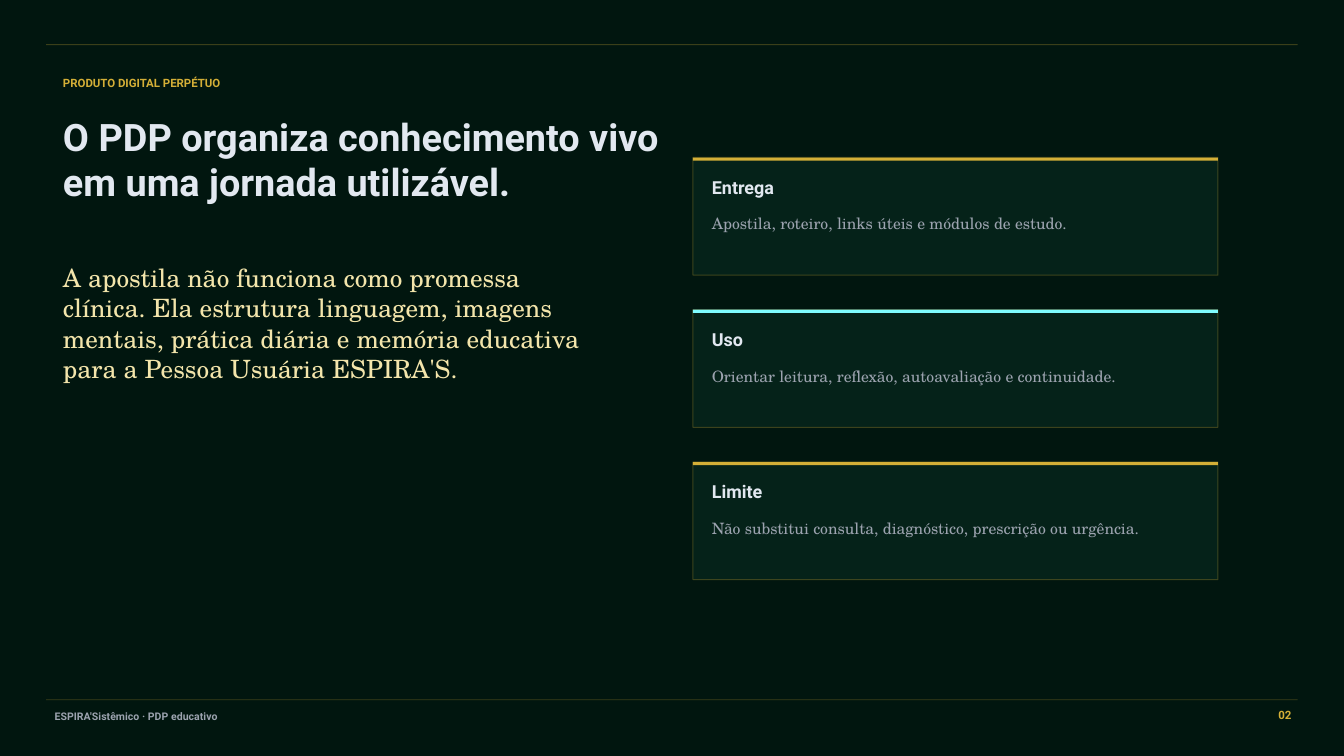
from lxml import etree
from pptx import Presentation
from pptx.dml.color import RGBColor
from pptx.enum.shapes import MSO_SHAPE
from pptx.enum.text import PP_ALIGN
from pptx.oxml.ns import qn
from pptx.util import Inches, Pt

RECTANGLE = MSO_SHAPE.RECTANGLE
LEFT, RIGHT = PP_ALIGN.LEFT, PP_ALIGN.RIGHT

WIDTH, HEIGHT = 13.33, 7.5
COLUMNS, ROWS = 64, 36
SANS, SERIF = "Roboto", "TeX Gyre Schola"
COLORS = {
    "night": "01160F",
    "panel": "08291F",
    "gold": "D4AF37",
    "cream": "F3E5AB",
    "cyan": "7FFCFF",
    "light": "E2E8F0",
    "gray": "9CA3AF",
}


class SlideBuilder:
    def __init__(self, slide):
        self.slide = slide

    def place(self, column, row, columns, rows):
        across, down = WIDTH / COLUMNS, HEIGHT / ROWS
        return (Inches(column * across), Inches(row * down),
                Inches(columns * across), Inches(rows * down))

    def paint(self, fill, color, opacity):
        fill.solid()
        fill.fore_color.rgb = RGBColor.from_string(COLORS[color])
        if opacity < 100:
            tone = fill._xPr.find(qn("a:solidFill"))[0]
            etree.SubElement(tone, qn("a:alpha"), val=str(opacity * 1000))

    def block(self, area, color, opacity=100, border=None):
        block = self.slide.shapes.add_shape(RECTANGLE, *self.place(*area))
        block.shadow.inherit = False
        self.paint(block.fill, color, opacity)
        if border:
            block.line.width = Pt(0.75)
            self.paint(block.line.fill, border, 27)
        else:
            block.line.fill.background()

    def text(self, area, words, font, size, color, bold=False, align=LEFT):
        frame = self.slide.shapes.add_textbox(*self.place(*area)).text_frame
        frame.word_wrap = True
        frame.margin_left = frame.margin_right = 0
        frame.margin_top = frame.margin_bottom = 0
        paragraph = frame.paragraphs[0]
        paragraph.alignment = align
        run = paragraph.add_run()
        run.text = words
        run.font.name = font
        run.font.size = Pt(size)
        run.font.bold = bold
        run.font.color.rgb = RGBColor.from_string(COLORS[color])

    def card(self, row, heading, detail, accent):
        self.block((33, row, 25, 5.6), "panel", 67, "gold")
        self.block((33, row, 25, 0.15), accent)
        self.text((33.9, row + 0.9, 23.2, 1.3), heading, SANS, 12.8, "light", True)
        self.text((33.9, row + 2.7, 23.2, 2.3), detail, SERIF, 11.2, "gray")


def main():
    deck = Presentation()
    deck.slide_width, deck.slide_height = Inches(WIDTH), Inches(HEIGHT)
    page = SlideBuilder(deck.slides.add_slide(deck.slide_layouts[6]))

    page.block((0, 0, COLUMNS, ROWS), "night")
    for rule_row in (2.1, 33.3):
        page.block((2.2, rule_row, 59.6, 0.05), "gold", 27)

    page.text((3, 3.6, 26, 1.1), "PRODUTO DIGITAL PERPÉTUO", SANS, 8.2, "gold", True)
    page.text((3, 5.4, 29.5, 6.6),
              "O PDP organiza conhecimento vivo em uma jornada utilizável.",
              SANS, 27, "light", True)
    page.text((3, 12.5, 26, 9),
              "A apostila não funciona como promessa clínica. Ela estrutura "
              "linguagem, imagens mentais, prática diária e memória educativa "
              "para a Pessoa Usuária ESPIRA'S.",
              SERIF, 18, "cream")

    cards = (
        ("Entrega", "Apostila, roteiro, links úteis e módulos de estudo.", "gold"),
        ("Uso", "Orientar leitura, reflexão, autoavaliação e continuidade.", "cyan"),
        ("Limite", "Não substitui consulta, diagnóstico, prescrição ou urgência.", "gold"),
    )
    for position, (heading, detail, accent) in enumerate(cards):
        page.card(7.5 + 7.25 * position, heading, detail, accent)

    page.text((2.6, 33.8, 26, 0.9), "ESPIRA'Sistêmico · PDP educativo",
              SANS, 7.5, "gray", True)
    page.text((59.5, 33.7, 2, 0.9), "02", SANS, 8.2, "gold", True, RIGHT)

    deck.save("out.pptx")


if __name__ == "__main__":
    main()
